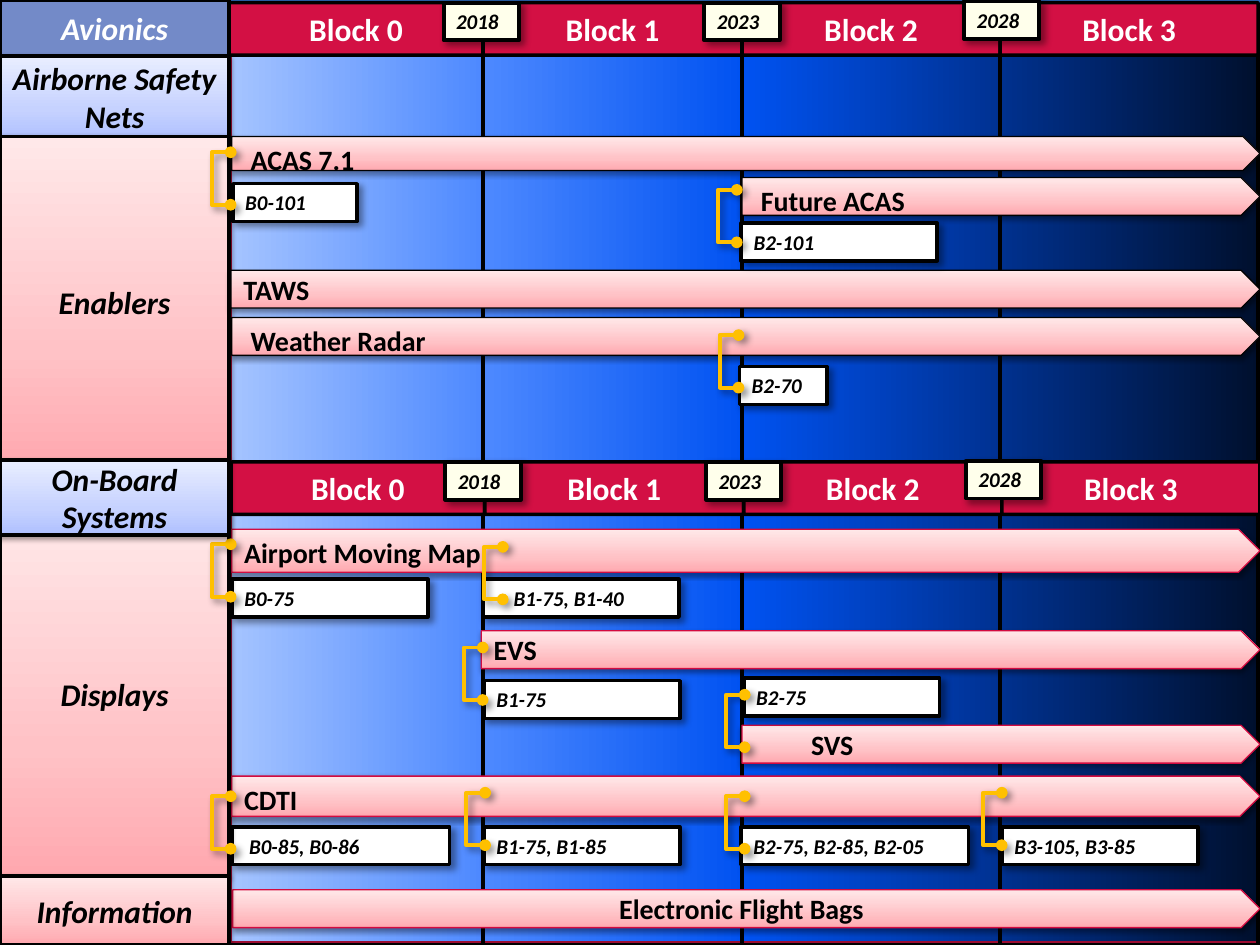
from lxml.etree import SubElement as Sub
from pptx import Presentation
from pptx.dml.color import RGBColor
from pptx.enum.shapes import MSO_CONNECTOR as Conn, MSO_SHAPE as Kind
from pptx.enum.text import MSO_ANCHOR as Anchor, PP_ALIGN as Align
from pptx.oxml.ns import qn
from pptx.util import Pt

HUE = {
    "back": "2C6ABA", "black": "000000", "white": "FFFFFF", "red": "D31044",
    "wine": "9C0C32", "edge": "D30B40", "cream": "FFFFEB", "slate": "738AC8",
    "gold": "FFC000",
}
# Gradients: angle in degrees, then (stop in percent, colour)
FADES = {
    "sea": (0, [(0, "A5C4FF"), (25, "4C88FF"), (50, "0052F1"), (100, "00102E")]),
    "pink": (270, [(0, "FFA8AF"), (35, "FFC2C6"), (100, "FFE8E9")]),
    "sky": (270, [(0, "B0C1FF"), (35, "C6D2FF"), (100, "E9EEFF")]),
}
# Shadows: opacity in percent, blur, distance, direction
SOFT = (38, 3.1, 1.6, 90)
DROP = (40, 4, 3, 45)
EDGES = [131, 276, 424, 571.5, 719]
WIDE, HIGH = 720, 540


def rgb(name):
    return RGBColor.from_string(HUE[name])


class Chart:
    """Draws the roadmap's elements on one slide; lengths are in points."""

    def __init__(self, slide):
        self.slide = slide
        self.place = slide.shapes
        slide.background.fill.solid()
        slide.background.fill.fore_color.rgb = rgb("back")

    def paint(self, shape, fill):
        if fill is None:
            shape.fill.background()
        elif fill in FADES:
            shape.fill.gradient()
            angle, stops = FADES[fill]
            grad = shape.element.spPr.find(qn("a:gradFill"))
            items = grad.find(qn("a:gsLst"))
            for old in list(items):
                items.remove(old)
            for pos, tone in stops:
                stop = Sub(items, qn("a:gs"), pos=str(pos * 1000))
                Sub(stop, qn("a:srgbClr"), val=tone)
            grad.find(qn("a:lin")).set("ang", str(angle * 60000))
        else:
            shape.fill.solid()
            shape.fill.fore_color.rgb = rgb(fill)

    def shade(self, props, look):
        """Fill in the effect list; without a look it stays empty."""
        list_tag = qn("a:effectLst")
        fx = props.find(list_tag)
        if fx is None:
            fx = Sub(props, list_tag)
        if look:
            alpha, blur, dist, angle = look
            cast = Sub(fx, qn("a:outerShdw"), blurRad=str(Pt(blur)),
                       dist=str(Pt(dist)), dir=str(angle * 60000),
                       rotWithShape="0")
            tone = Sub(cast, qn("a:srgbClr"), val=HUE["black"])
            Sub(tone, qn("a:alpha"), val=str(alpha * 1000))

    def box(self, x, y, w, h, fill=None, kind=Kind.RECTANGLE, line="black",
            thick=2, look=None):
        shape = self.place.add_shape(kind, Pt(x), Pt(y), Pt(w), Pt(h))
        self.paint(shape, fill)
        shape.line.color.rgb = rgb(line)
        shape.line.width = Pt(thick)
        shape.shadow.inherit = False
        self.shade(shape.element.spPr, look)
        return shape

    def label(self, shape, text, size, color="black", italic=True,
              align=Align.LEFT, anchor=Anchor.MIDDLE, inset=7.2):
        frame = shape.text_frame
        frame.word_wrap = True
        frame.vertical_anchor = anchor
        frame.margin_left = Pt(inset)
        frame.text = text
        for para in frame.paragraphs:
            para.alignment = align
            font = para.font
            font.name, font.size = "Calibri", Pt(size)
            font.bold, font.italic = True, italic
            font.color.rgb = rgb(color)

    def head(self, x, y):
        """Row of block titles with year labels on the borders."""
        self.place = self.slide.shapes.add_group_shape().shapes
        for i, (left, right) in enumerate(zip(EDGES, EDGES[1:])):
            shape = self.box(x + left, y, right - left, 30, "red",
                             Kind.ROUNDED_RECTANGLE)
            shape.adjustments[0] = 0.02
            self.label(shape, f"Block {i}", 18, "white", False, Align.CENTER)
        for year, left, top in ((2018, 253.5, 0), (2023, 402.5, 0),
                                (2028, 551, -0.7)):
            shape = self.box(x + left, y + top, 43, 21.6, "cream",
                             thick=2.25, look=DROP)
            self.label(shape, str(year), 12, anchor=Anchor.TOP)
        self.place = self.slide.shapes

    def side(self, y, h, text, fill="pink", color="black", look=SOFT):
        shape = self.box(0, y, 131, h, fill, thick=2.25, look=look)
        self.label(shape, text, 18, color, align=Align.CENTER)

    def bar(self, x, y, text, h=21.6, line="edge", anchor=Anchor.MIDDLE,
            inset=7.2, align=Align.LEFT):
        shape = self.box(x, y, WIDE - x, h, "pink", Kind.PENTAGON, line,
                         0.75, SOFT)
        self.label(shape, text, 16, italic=False, align=align, anchor=anchor,
                   inset=inset)

    def tag(self, x, y, text, w=112, inset=7.2):
        shape = self.box(x, y, w, 21.6, "white", look=DROP)
        self.label(shape, text, 12, inset=inset)

    def link(self, x, y):
        """Bracket opening to the right, with a dot at each end."""
        thin, reach = 0.05, 9.5
        wire = self.place.add_connector(Conn.ELBOW, Pt(x), Pt(y),
                                        Pt(x + thin), Pt(y + 30))
        wire.line.color.rgb = rgb("gold")
        wire.line.width = Pt(2.25)
        props = wire.element.spPr
        frame = props.find(qn("a:xfrm"))
        frame.set("rot", "10800000")
        frame.set("flipV", "1")
        guides = props.find(qn("a:prstGeom")).find(qn("a:avLst"))
        Sub(guides, qn("a:gd"), name="adj1",
            fmla=f"val {round(reach / thin * 100000)}")
        stroke = props.find(qn("a:ln"))
        for end in ("a:headEnd", "a:tailEnd"):
            Sub(stroke, qn(end), type="oval")
        self.shade(props, DROP)


def main():
    deck = Presentation()
    deck.slide_width, deck.slide_height = Pt(WIDE), Pt(HIGH)
    art = Chart(deck.slides.add_slide(deck.slide_layouts[6]))

    art.box(131.8, 29, 587, 509.5, "sea", line="wine")
    for left, right in zip(EDGES, EDGES[1:]):
        art.box(left, 15, right - left, 525)
    art.head(0, 1.5)

    art.side(0, 32, "Avionics", "slate", "white", None)
    art.side(32, 47, "Airborne Safety Nets", "sky")
    art.side(78, 189, "Enablers")

    top = {"anchor": Anchor.TOP}
    dark = {"line": "black"}
    art.bar(132.5, 181.5, "Weather Radar", inset=10.8, **top, **dark)
    art.bar(132.5, 78, "ACAS 7.1", 19.5, inset=10.8, **top, **dark)
    art.bar(132, 154.5, "TAWS", **dark)
    art.bar(424, 101.5, "Future ACAS", inset=10.8, **top, **dark)
    art.bar(132.5, 443.5, "CDTI", 23, **top)
    art.bar(424, 414.5, "SVS", inset=39.5)
    art.bar(132.5, 302.5, "Airport Moving Map", 24.5, **top)
    art.bar(133, 508.5, "Electronic Flight Bags", align=Align.CENTER)
    art.bar(275, 360.5, "EVS")

    art.tag(133, 105, "B0-101", 71)
    art.tag(423.5, 127.5, "B2-101")
    art.tag(422.5, 209.5, "B2-70", 50)
    art.tag(425, 387.5, "B2-75")
    art.tag(132.5, 331, "B0-75")
    art.tag(276, 331, "B1-75, B1-40", inset=17.5)
    art.tag(276.5, 389, "B1-75")
    art.tag(132.5, 472.5, "B0-85, B0-86", 124.5, 9.9)
    art.tag(276.5, 472.5, "B1-75, B1-85")
    art.tag(423.5, 472.5, "B2-75, B2-85, B2-05", 130)
    art.tag(572.5, 472.5, "B3-105, B3-85")

    art.head(1, 264)
    art.side(293, 207.5, "Displays")
    art.side(500.5, 39.5, "Information")

    for x, y in ((131.8, 87), (421, 108.5), (422, 191.5), (131.8, 311),
                 (287.3, 312.5), (425.5, 397), (275.8, 370), (131.8, 455),
                 (277.2, 453), (425.5, 455), (572.4, 453)):
        art.link(x, y)
    art.side(263, 42.5, "On-Board\nSystems", "sky")

    deck.save("out.pptx")


if __name__ == "__main__":
    main()
